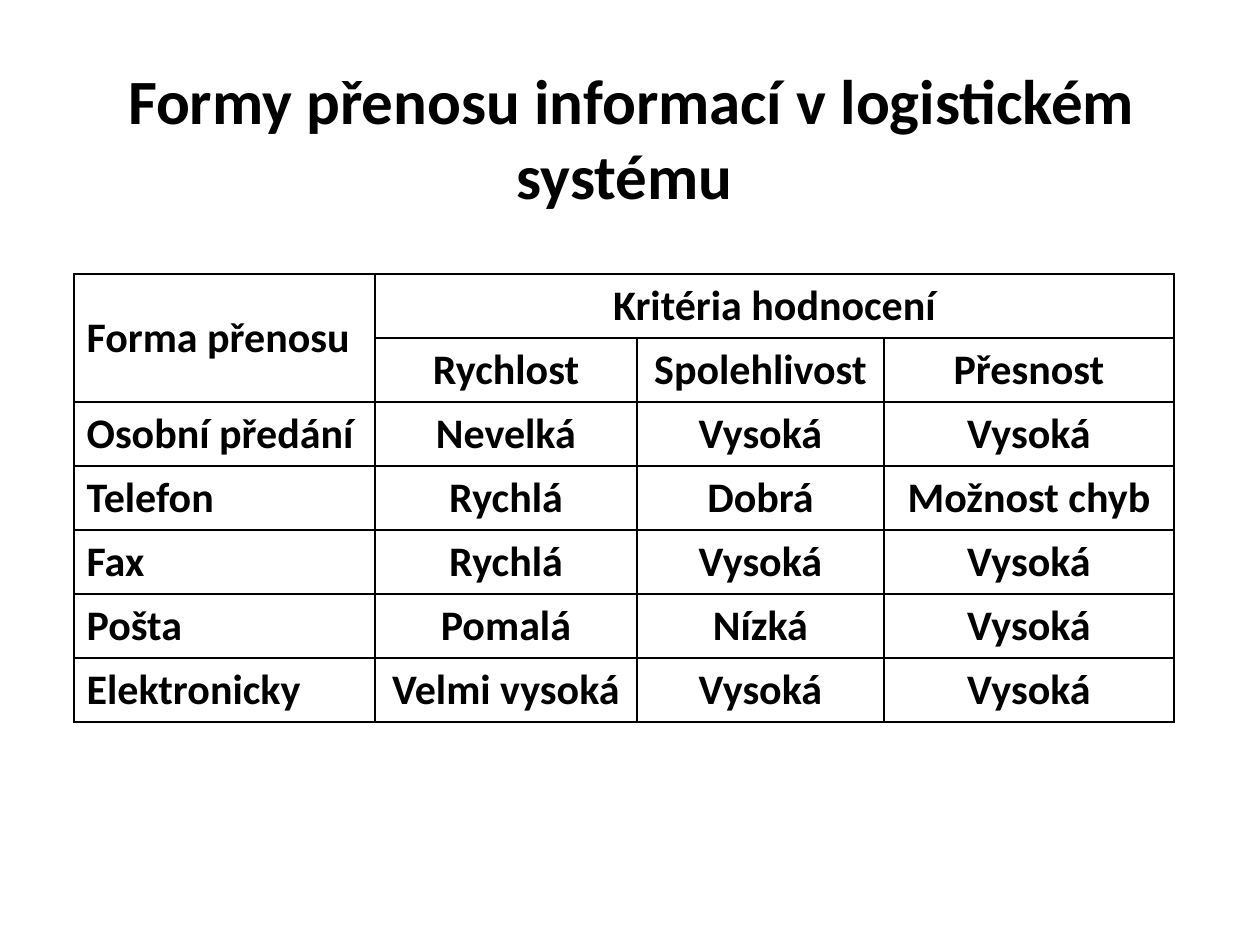
from lxml import etree
from pptx import Presentation
from pptx.dml.color import RGBColor
from pptx.enum.text import MSO_ANCHOR, MSO_AUTO_SIZE, PP_ALIGN
from pptx.oxml.ns import qn
from pptx.util import Emu, Pt

LEFT, CENTER = PP_ALIGN.LEFT, PP_ALIGN.CENTER
TOP, MIDDLE = MSO_ANCHOR.TOP, MSO_ANCHOR.MIDDLE
FIT_SHAPE = MSO_AUTO_SIZE.SHAPE_TO_FIT_TEXT
TITLE_ONLY = 5
EMU_PER_PX = 914400 / 126
BLACK, WHITE = "000000", "FFFFFF"

COLUMN_WIDTHS = (301, 262, 247, 290)
ROW_HEIGHT = 64
ROWS = (
    ("Forma přenosu", "Kritéria hodnocení", "", ""),
    ("", "Rychlost", "Spolehlivost", "Přesnost"),
    ("Osobní předání", "Nevelká", "Vysoká", "Vysoká"),
    ("Telefon", "Rychlá", "Dobrá", "Možnost chyb"),
    ("Fax", "Rychlá", "Vysoká", "Vysoká"),
    ("Pošta", "Pomalá", "Nízká", "Vysoká"),
    ("Elektronicky", "Velmi vysoká", "Vysoká", "Vysoká"),
)


def px(length):
    return Emu(round(length * EMU_PER_PX))


def color(hex_string):
    return RGBColor.from_string(hex_string)


def paint(fill, hex_string):
    fill.solid()
    fill.fore_color.rgb = color(hex_string)


def write_text(frame, text, size=24, align=CENTER, font="Calibri", ink=BLACK, bold=True):
    paragraph = frame.paragraphs[0]
    paragraph.alignment = align
    run = paragraph.add_run()
    run.text = text
    run.font.name = font
    run.font.size = Pt(size)
    run.font.bold = bold
    run.font.color.rgb = color(ink)


def add_borders(cell, ink=BLACK, width=1):
    properties = cell._tc.get_or_add_tcPr()
    for index, side in enumerate(("a:lnL", "a:lnR", "a:lnT", "a:lnB")):
        line = etree.Element(qn(side), w=str(Pt(width)))
        fill = etree.SubElement(line, qn("a:solidFill"))
        etree.SubElement(fill, qn("a:srgbClr"), val=ink)
        properties.insert(index, line)


def add_title(slide, left, top, width, height):
    title = slide.shapes.title
    title.left, title.top, title.width, title.height = map(px, (left, top, width, height))
    paint(title.fill, WHITE)
    frame = title.text_frame
    frame.word_wrap = True
    frame.auto_size = FIT_SHAPE
    frame.vertical_anchor = TOP
    write_text(frame, " Formy přenosu informací v logistickém systému", size=36)


def add_criteria_table(slide, left, top):
    width, height = sum(COLUMN_WIDTHS), ROW_HEIGHT * len(ROWS)
    frame = slide.shapes.add_table(
        len(ROWS), len(COLUMN_WIDTHS), px(left), px(top), px(width), px(height)
    )
    table = frame.table
    table.first_row = table.horz_banding = False
    for column, column_width in zip(table.columns, COLUMN_WIDTHS):
        column.width = px(column_width)
    for row_index, texts in enumerate(ROWS):
        table.rows[row_index].height = px(ROW_HEIGHT)
        for column_index, text in enumerate(texts):
            cell = table.cell(row_index, column_index)
            paint(cell.fill, WHITE)
            add_borders(cell)
            if text:
                write_text(cell.text_frame, text, align=CENTER if column_index else LEFT)
    table.cell(0, 0).merge(table.cell(1, 0))
    table.cell(0, 0).vertical_anchor = MIDDLE
    table.cell(0, 1).merge(table.cell(0, 3))


def main():
    presentation = Presentation()
    presentation.slide_width, presentation.slide_height = px(1260), px(945)
    slide = presentation.slides.add_slide(presentation.slide_layouts[TITLE_ONLY])
    paint(slide.background.fill, WHITE)
    add_criteria_table(slide, 74, 274)
    add_title(slide, 29, 55, 1191, 165)
    presentation.save("out.pptx")


if __name__ == "__main__":
    main()
